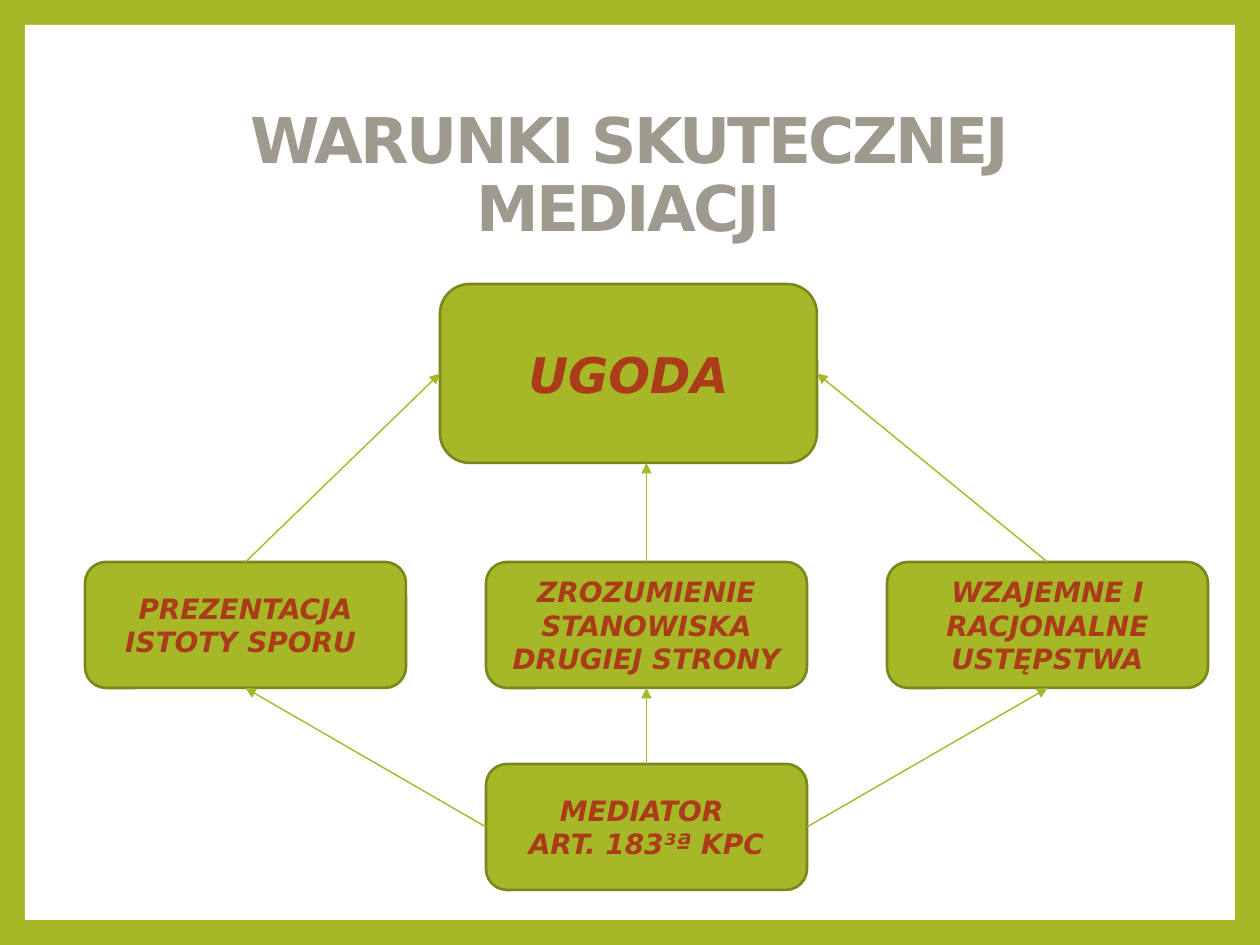
from dataclasses import dataclass

from pptx import Presentation
from pptx import util as u
from pptx.dml.color import RGBColor as Rgb
from pptx.enum import shapes, text
from pptx.oxml.ns import qn
from lxml import etree

PX = 914400 / 126


@dataclass(frozen=True)
class Theme:
    """Colours, font and type sizes of the slide."""
    green: Rgb = Rgb.from_string("A6B727")
    edge: Rgb = Rgb.from_string("7B871D")
    rust: Rgb = Rgb.from_string("AB3C19")
    grey: Rgb = Rgb.from_string("9E9A8D")
    white: Rgb = Rgb.from_string("FFFFFF")
    font: str = "DejaVu Sans"
    head: int = 36
    goal: int = 28
    body: int = 16


THEME = Theme()


def emu(*vals):
    """Turn px lengths into EMU."""
    return [u.Emu(round(v * PX)) for v in vals]


def style(frame, size, color, italic):
    """Centre the text and format its runs."""
    frame.word_wrap = True
    frame.vertical_anchor = text.MSO_ANCHOR.MIDDLE
    for par in frame.paragraphs:
        par.alignment = text.PP_ALIGN.CENTER
        for run in par.runs:
            font = run.font
            font.name, font.size = THEME.font, u.Pt(size)
            font.bold, font.italic = True, italic
            font.color.rgb = color


def frame(slide, box):
    """Paint the green border and the white panel inside it."""
    fill = slide.background.fill
    fill.solid()
    fill.fore_color.rgb = THEME.green
    panel = slide.shapes.add_shape(shapes.MSO_SHAPE.RECTANGLE, *emu(*box))
    panel.shadow.inherit = False
    panel.fill.solid()
    panel.fill.fore_color.rgb = THEME.white
    panel.line.fill.background()
    slide.shapes._spTree.insert(2, panel._element)


def heading(slide, box, words):
    """Place and format the title."""
    title = slide.shapes.title
    title.left, title.top, title.width, title.height = emu(*box)
    title.text_frame.text = words
    style(title.text_frame, THEME.head, THEME.grey, False)
    par = title.text_frame.paragraphs[0]
    par.line_spacing = 0.9
    par.runs[0].font._element.set("spc", "-150")


def node(slide, box, words, size=THEME.body):
    """Add one rounded box with its label."""
    shape = slide.shapes.add_shape(
        shapes.MSO_SHAPE.ROUNDED_RECTANGLE, *emu(*box))
    shape.shadow.inherit = False
    shape.fill.solid()
    shape.fill.fore_color.rgb = THEME.green
    shape.line.color.rgb = THEME.edge
    shape.line.width = u.Pt(1.5)
    shape.text_frame.text = words
    style(shape.text_frame, size, THEME.rust, True)
    return shape


def arrow(slide, start, side, end, site=None):
    """Join two boxes, or rise straight to the end box when site is None."""
    mid = start.left + start.width // 2
    line = slide.shapes.add_connector(
        shapes.MSO_CONNECTOR.STRAIGHT, mid, start.top,
        mid, end.top + end.height)
    line.begin_connect(start, side)
    if site is not None:
        line.end_connect(end, site)
    line.line.color.rgb = THEME.green
    line.line.width = u.Pt(0.79)
    props = line._element.spPr
    etree.SubElement(props.find(qn("a:ln")), qn("a:tailEnd"), type="triangle")
    etree.SubElement(props, qn("a:effectLst"))


def diagram(slide, box):
    """Lay out the goal, the three conditions and the mediator."""
    left, top, width, height = box
    wide, high = 321, 126
    step = (width - wide) // 2
    goal = node(slide, (left + 355, top, 377, 179), "UGODA", THEME.goal)
    labels = ("PREZENTACJA ISTOTY SPORU ",
              "ZROZUMIENIE STANOWISKA DRUGIEJ STRONY",
              "WZAJEMNE I RACJONALNE USTĘPSTWA")
    terms = [node(slide, (left + i * step, top + 278, wide, high), label)
             for i, label in enumerate(labels)]
    guide = node(slide, (left + step, top + height - high, wide, high),
                 "MEDIATOR \nART. 183³ª KPC")
    for term, site, side in zip(terms, (1, None, 3), (1, 0, 3)):
        arrow(slide, term, 0, goal, site)
        arrow(slide, guide, side, term, 2)


def main():
    """Build the slide and save it."""
    deck = Presentation()
    deck.slide_width, deck.slide_height = emu(1260, 945)
    slide = deck.slides.add_slide(deck.slide_layouts[5])
    frame(slide, (25, 25, 1210, 895))
    heading(slide, (118, 84, 1021, 186), "WARUNKI SKUTECZNEJ MEDIACJI")
    diagram(slide, (85, 284, 1123, 606))
    deck.save("out.pptx")


if __name__ == "__main__":
    main()
